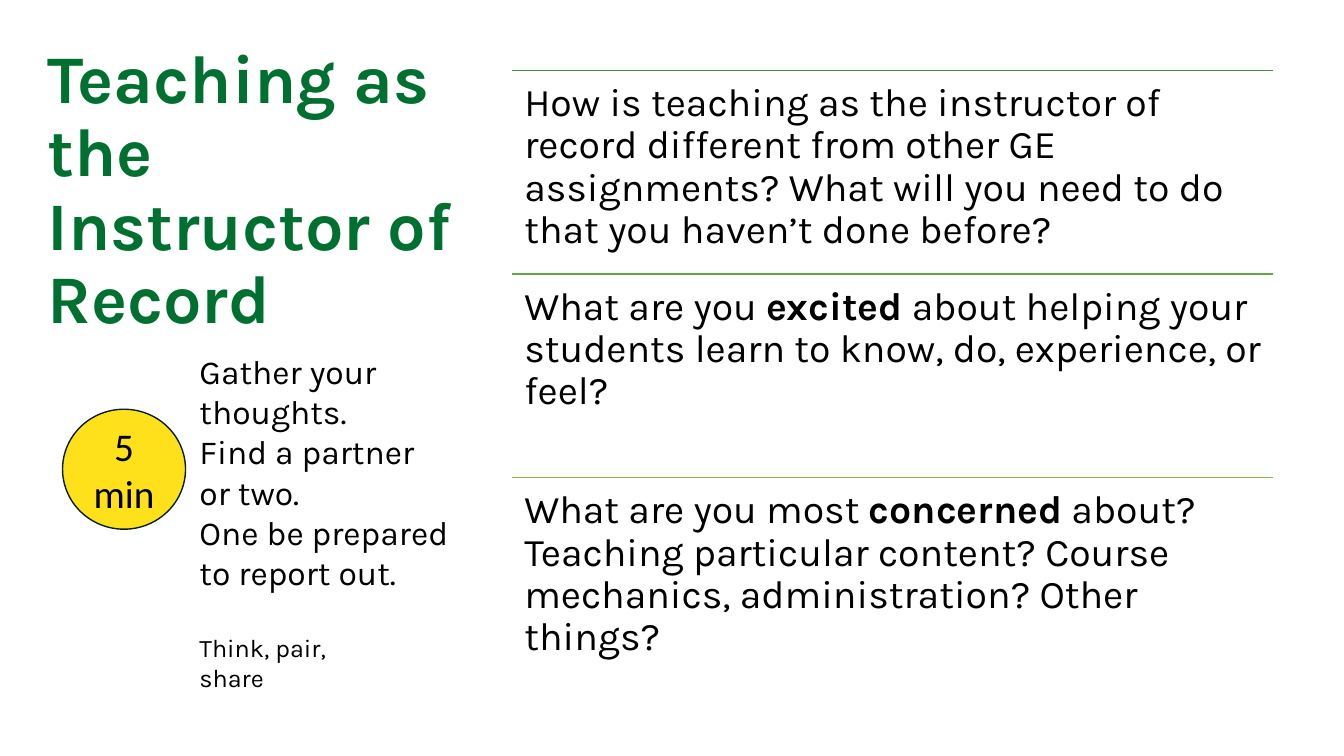
from lxml.etree import SubElement
from pptx import Presentation
from pptx.dml.color import RGBColor
from pptx.enum.shapes import MSO_CONNECTOR, MSO_SHAPE
from pptx.enum.text import MSO_ANCHOR, MSO_AUTO_SIZE, PP_ALIGN
from pptx.oxml.ns import qn
from pptx.util import Inches, Pt

TITLE_GREEN = RGBColor(0x00, 0x70, 0x30)
TIMER_YELLOW = RGBColor(0xFE, 0xE1, 0x1A)
TIMER_EDGE = RGBColor(0x07, 0x1F, 0x17)
BLACK = RGBColor(0, 0, 0)
RULE_GREENS = [RGBColor(0x48, 0x90, 0x46), RGBColor(0x62, 0xA5, 0x44),
               RGBColor(0x8A, 0xBB, 0x40)]

# Each question is a list of (text, bold) runs
QUESTIONS = [
    [("How is teaching as the instructor of record different from other GE "
      "assignments? What will you need to do that you haven’t done before?", False)],
    [("What are you ", False), ("excited", True),
     (" about helping your students learn to know, do, experience, or feel?", False)],
    [("What are you most ", False), ("concerned", True),
     (" about? Teaching particular content? Course mechanics, administration? "
      "Other things?", False)],
]
STEPS = ["Gather your thoughts.", "Find a partner or two.",
         "One be prepared to report out."]


def add_run(paragraph, text, size, color=BLACK, bold=False, font="Karla"):
    run = paragraph.add_run()
    run.text = text
    run.font.name = font
    run.font.size = Pt(size)
    run.font.bold = bold
    run.font.color.rgb = color


def add_text(slide, left, top, width, height, paragraphs, size):
    """Add a wrapped text box; each paragraph is a list of (text, bold) runs."""
    box = slide.shapes.add_textbox(Inches(left), Inches(top),
                                   Inches(width), Inches(height))
    frame = box.text_frame
    frame.word_wrap = True
    for index, runs in enumerate(paragraphs):
        paragraph = frame.add_paragraph() if index else frame.paragraphs[0]
        for text, bold in runs:
            add_run(paragraph, text, size, bold=bold)
    return frame


def place_title(slide, left, top, width, height):
    title = slide.shapes.title
    title.left, title.top = Inches(left), Inches(top)
    title.width, title.height = Inches(width), Inches(height)
    frame = title.text_frame
    frame.word_wrap = True
    frame.auto_size = MSO_AUTO_SIZE.NONE
    frame.vertical_anchor = MSO_ANCHOR.MIDDLE
    heading = frame.paragraphs[0]
    heading.alignment = PP_ALIGN.LEFT
    heading.line_spacing = 0.9
    add_run(heading, "Teaching as the Instructor of Record", 48.6, TITLE_GREEN, True)


def add_activity(slide, left, top):
    # Timer
    timer = slide.shapes.add_shape(MSO_SHAPE.OVAL, Inches(left), Inches(top + 0.63),
                                   Inches(1.22), Inches(1.19))
    timer.shadow.inherit = False
    timer.fill.solid()
    timer.fill.fore_color.rgb = TIMER_YELLOW
    timer.line.color.rgb = TIMER_EDGE
    timer.line.width = Pt(1)
    timer.text_frame.word_wrap = True
    timer.text_frame.vertical_anchor = MSO_ANCHOR.MIDDLE
    minutes = timer.text_frame.paragraphs[0]
    minutes.alignment = PP_ALIGN.CENTER
    add_run(minutes, "5 min", 28, font="Calibri")

    # Steps and the name of the method
    text_left = left + 1.26
    add_text(slide, text_left, top, 2.67, 2.52, [[(step, False)] for step in STEPS], 24)
    add_text(slide, text_left, top + 2.79, 1.5, 0.71, [[("Think, pair, share", False)]], 18)


def add_questions(slide, left, top, width, height):
    row_height = height / len(QUESTIONS)
    for row, (runs, green) in enumerate(zip(QUESTIONS, RULE_GREENS)):
        row_top = top + row * row_height
        # Rule above the question
        rule = slide.shapes.add_connector(
            MSO_CONNECTOR.STRAIGHT, Inches(left), Inches(row_top),
            Inches(left + width), Inches(row_top))
        rule.line.color.rgb = green
        rule.line.width = Pt(1)
        SubElement(rule._element.spPr, qn("a:effectLst"))

        # Question
        question = add_text(slide, left, row_top, width, row_height, [runs], 28)
        question.margin_left = question.margin_right = Inches(0.12)
        question.margin_top = question.margin_bottom = Inches(0.12)
        question.paragraphs[0].line_spacing = 0.9


def main():
    presentation = Presentation()
    presentation.slide_width = Inches(13.33)
    presentation.slide_height = Inches(7.5)
    slide = presentation.slides.add_slide(presentation.slide_layouts[5])
    place_title(slide, 0.37, 0.37, 4.51, 3.06)
    add_activity(slide, 0.62, 3.43)
    add_questions(slide, 5.08, 0.7, 7.55, 6.06)
    presentation.save("out.pptx")


if __name__ == "__main__":
    main()
